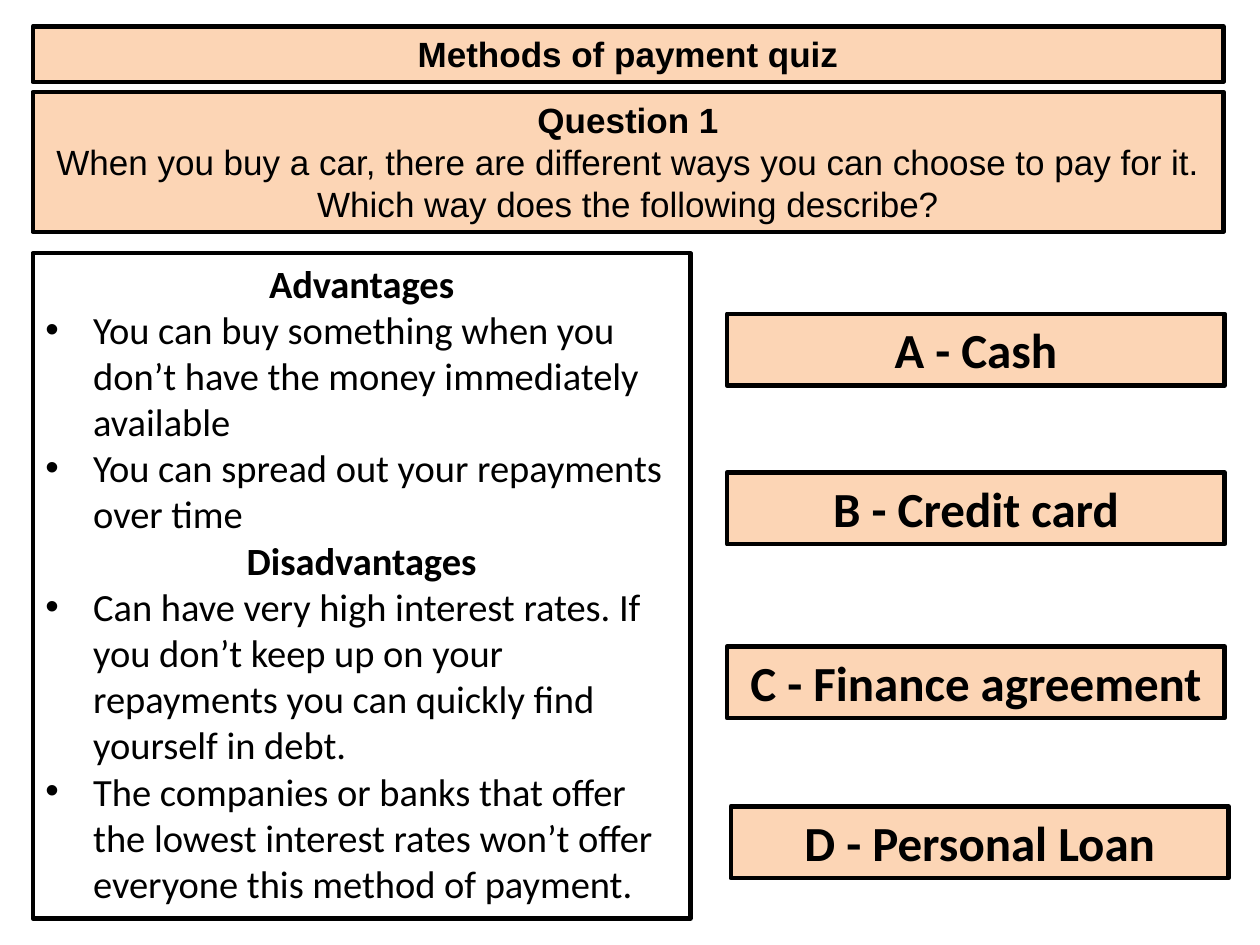
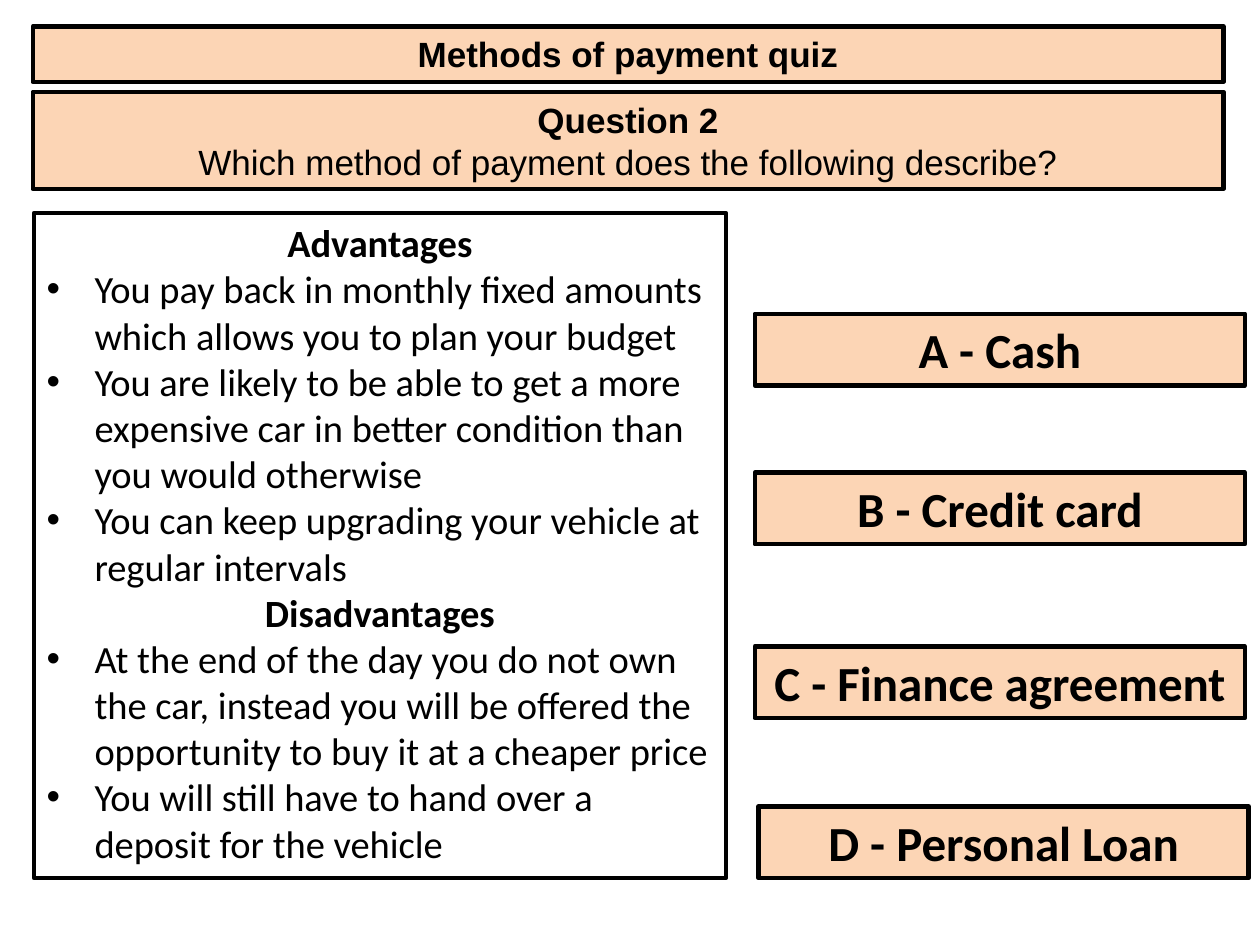
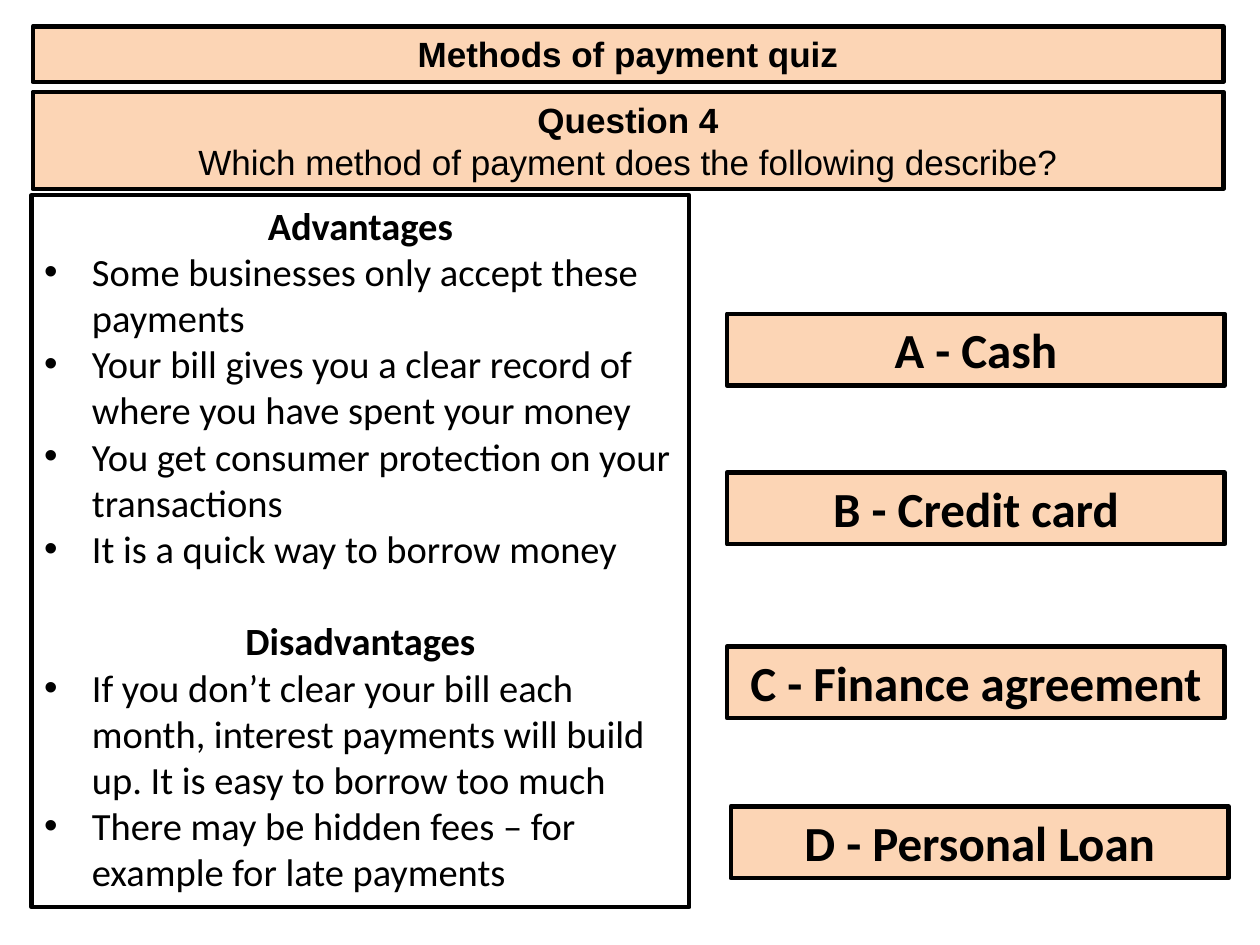
"""Build a three-slide quiz on methods of payment."""
from lxml import etree
from pptx import Presentation
from pptx.dml.color import RGBColor
from pptx.enum import text as t
from pptx.oxml import ns
from pptx.util import Inches, Pt

PEACH, WHITE, BLACK = "FCD5B5", "FFFFFF", "000000"
HEADING_FONT, BODY_FONT = "Arial", "Calibri"
BODY_SIZE, BULLET_INDENT = 22, 0.38

QUIZ_TITLE = "Methods of payment quiz"
METHOD_PROMPT = "Which method of payment does the following describe?"
ANSWERS = [
    ("A - Cash", 0, 2.49),
    ("B - Credit card", 0, 3.75),
    ("C - Finance agreement", 0, 5.13),
    ("D - Personal Loan", 0.03, 6.4),
]
QUESTIONS = [
    {
        "heading": "Question 1",
        "prompt": "When you buy a car, there are different ways you can choose to pay for it. "
                  "Which way does the following describe?",
        "prompt_height": 1.11,
        "facts_at": (0.26, 2.01, 5.22, 5.28),
        "answers_left": 5.77,
        "answers_width": 3.95,
        "gap": 0,
        "advantages": [
            "You can buy something when you don’t have the money immediately available",
            "You can spread out your repayments over time",
        ],
        "disadvantages": [
            "Can have very high interest rates. If you don’t keep up on your repayments "
            "you can quickly find yourself in debt.",
            "The companies or banks that offer the lowest interest rates won’t offer "
            "everyone this method of payment.",
        ],
    },
    {
        "heading": "Question 2",
        "prompt": METHOD_PROMPT,
        "prompt_height": 0.77,
        "facts_at": (0.27, 1.69, 5.49, 5.28),
        "answers_left": 5.99,
        "answers_width": 3.89,
        "gap": 0,
        "advantages": [
            "You pay back in monthly fixed amounts which allows you to plan your budget",
            "You are likely to be able to get a more expensive car in better condition "
            "than you would otherwise",
            "You can keep upgrading your vehicle at regular intervals",
        ],
        "disadvantages": [
            "At the end of the day you do not own the car, instead you will be offered "
            "the opportunity to buy it at a cheaper price",
            "You will still have to hand over a deposit for the vehicle",
        ],
    },
    {
        "heading": "Question 4",
        "prompt": METHOD_PROMPT,
        "prompt_height": 0.77,
        "facts_at": (0.25, 1.55, 5.22, 5.65),
        "answers_left": 5.77,
        "answers_width": 3.95,
        "gap": 26.5,
        "advantages": [
            "Some businesses only accept these payments",
            "Your bill gives you a clear record of where you have spent your money",
            "You get consumer protection on your transactions",
            "It is a quick way to borrow money",
        ],
        "disadvantages": [
            "If you don’t clear your bill each month, interest payments will build up. "
            "It is easy to borrow too much",
            "There may be hidden fees – for example for late payments",
        ],
    },
]


def color(value):
    return RGBColor.from_string(value)


def frame(box, at, fill=PEACH):
    """Place a box, outline it and return its text frame."""
    box.left, box.top, box.width, box.height = map(Inches, at)
    box.fill.solid()
    box.fill.fore_color.rgb = color(fill)
    box.line.color.rgb = color(BLACK)
    box.line.width = Pt(2.5)
    words = box.text_frame
    words.word_wrap = True
    words.auto_size = t.MSO_AUTO_SIZE.NONE
    words.vertical_anchor = t.MSO_ANCHOR.TOP
    return words


def write(words, content, size=BODY_SIZE, font=BODY_FONT, bold=False, bullet=False, before=0):
    """Fill the empty first paragraph or add another one."""
    first = words.paragraphs[0]
    paragraph = words.add_paragraph() if first.runs else first
    indent = Inches(BULLET_INDENT) if bullet else 0
    properties = paragraph._p.get_or_add_pPr()
    properties.set("marL", str(indent))
    properties.set("indent", str(-indent))
    if bullet:
        etree.SubElement(properties, ns.qn("a:buFont"), typeface="Arial")
        etree.SubElement(properties, ns.qn("a:buChar"), char="•")
    else:
        etree.SubElement(properties, ns.qn("a:buNone"))
    paragraph.alignment = t.PP_ALIGN.LEFT if bullet else t.PP_ALIGN.CENTER
    paragraph.space_before = Pt(before)
    run = paragraph.add_run()
    run.text = content
    run.font.name, run.font.size, run.font.bold = font, Pt(size), bold
    run.font.color.rgb = color(BLACK)


def add_question(deck, question):
    slide = deck.slides.add_slide(deck.slide_layouts[1])
    title, facts = slide.placeholders

    def add_box(*at):
        return frame(slide.shapes.add_textbox(0, 0, 0, 0), at)

    write(frame(title, (0.26, 0.21, 9.45, 0.44)), QUIZ_TITLE, 20, HEADING_FONT, bold=True)

    prompt = add_box(0.26, 0.73, 9.45, question["prompt_height"])
    write(prompt, question["heading"], 20, HEADING_FONT, bold=True)
    write(prompt, question["prompt"], 20, HEADING_FONT)

    fact_words = frame(facts, question["facts_at"], WHITE)
    for side, gap in (("advantages", 0), ("disadvantages", question["gap"])):
        write(fact_words, side.capitalize(), bold=True, before=gap)
        for fact in question[side]:
            write(fact_words, fact, bullet=True)

    for answer, shift, top in ANSWERS:
        left = question["answers_left"] + shift
        write(add_box(left, top, question["answers_width"], 0.57), answer, 28, bold=True)


def main():
    deck = Presentation()
    deck.slide_width, deck.slide_height = Inches(10), Inches(7.5)
    for question in QUESTIONS:
        add_question(deck, question)
    deck.save("out.pptx")


if __name__ == "__main__":
    main()
